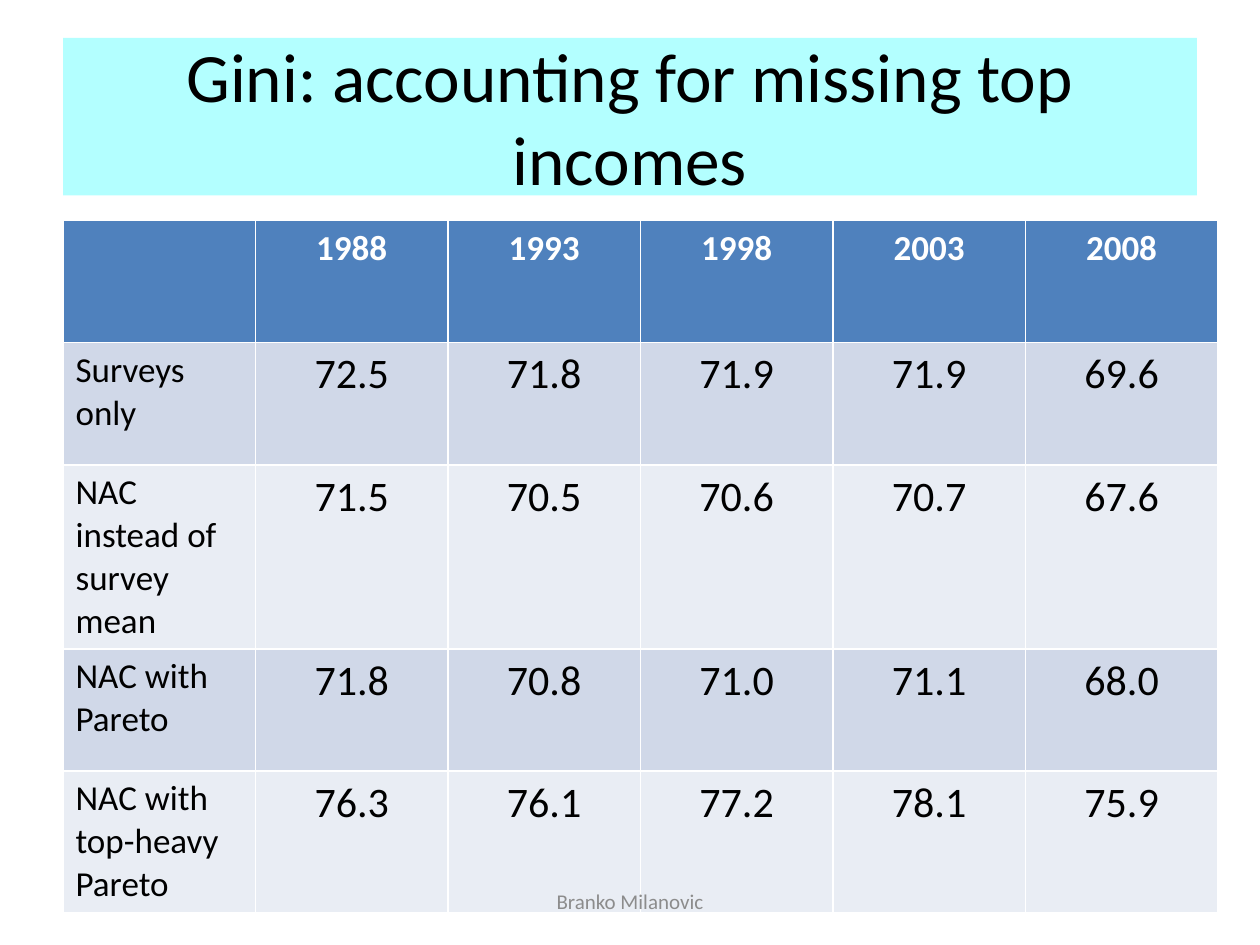
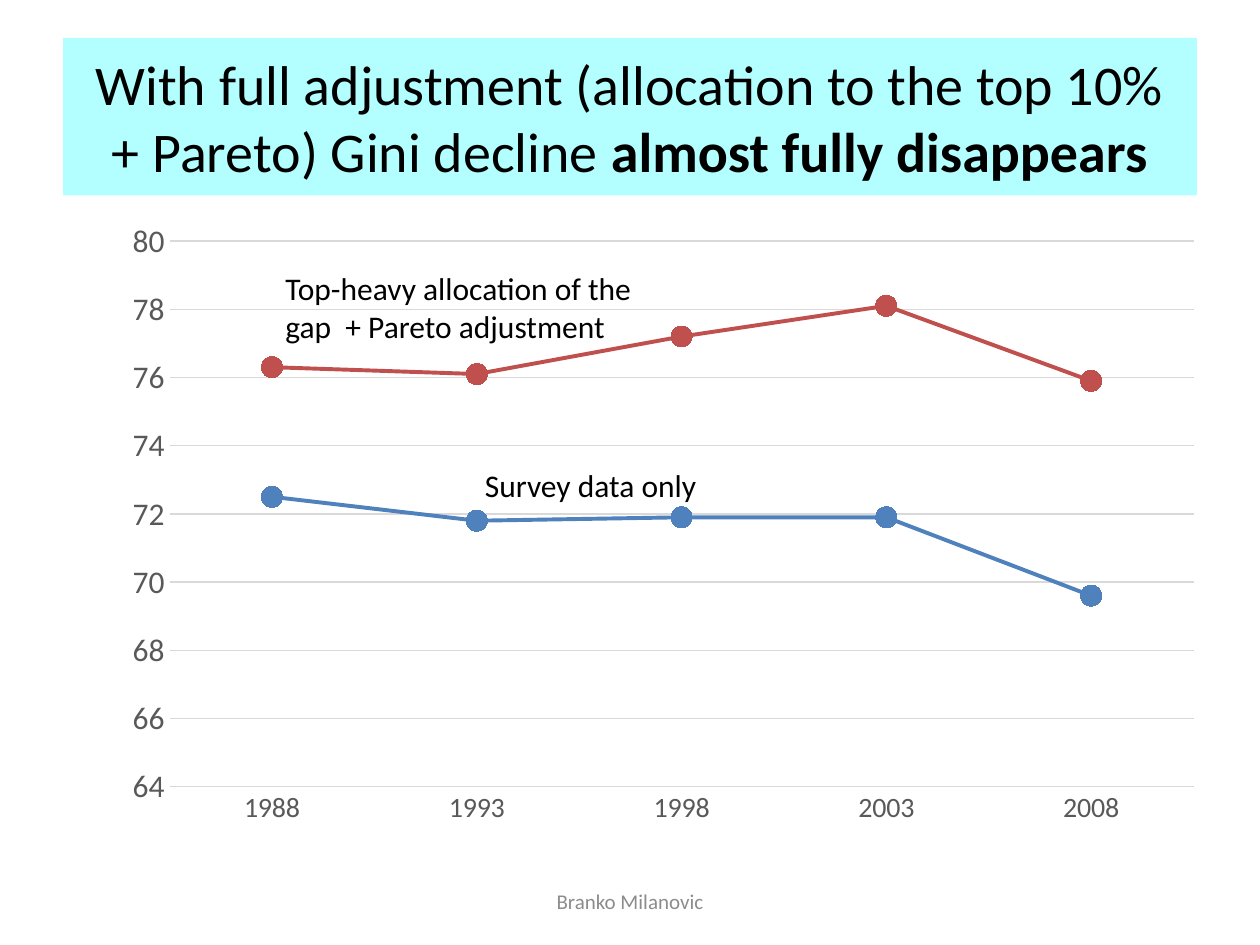
from dataclasses import dataclass

from lxml import etree
from pptx import Presentation
from pptx.chart.data import CategoryChartData
from pptx.dml.color import RGBColor
from pptx.enum.chart import XL_CHART_TYPE, XL_MARKER_STYLE, XL_TICK_MARK
from pptx.enum.text import MSO_ANCHOR, MSO_AUTO_SIZE, PP_ALIGN
from pptx.oxml.ns import qn
from pptx.util import Inches, Pt

LINE_MARKERS = XL_CHART_TYPE.LINE_MARKERS
CIRCLE = XL_MARKER_STYLE.CIRCLE
NO_TICK = XL_TICK_MARK.NONE
LEFT, CENTER = PP_ALIGN.LEFT, PP_ALIGN.CENTER
TOP, MIDDLE = MSO_ANCHOR.TOP, MSO_ANCHOR.MIDDLE
NO_AUTOFIT = MSO_AUTO_SIZE.NONE

SLIDE_WIDTH, SLIDE_HEIGHT = Inches(10), Inches(7.5)
GRID_COLUMNS, GRID_ROWS = 120, 90
TITLE_ONLY_LAYOUT = 5

YEARS = ["1988", "1993", "1998", "2003", "2008"]
GINI = {
    "Surveys only": [72.5, 71.8, 71.9, 71.9, 69.6],
    "NAC instead of survey mean": [71.5, 70.5, 70.6, 70.7, 67.6],
    "NAC with Pareto": [71.8, 70.8, 71.0, 71.1, 68.0],
    "NAC with top-heavy Pareto": [76.3, 76.1, 77.2, 78.1, 75.9],
}


@dataclass(frozen=True)
class Theme:
    font: str = "Calibri"
    text: str = "000000"
    white: str = "FFFFFF"
    band: str = "B3FFFF"
    blue: str = "4F81BD"
    red: str = "C0504D"
    stripes: tuple = ("D0D8E8", "E9EDF4")
    footer: str = "8C8C8C"
    axis_text: str = "595959"
    grid: str = "D9D9D9"
    title_size: float = 39.6
    long_title_size: float = 32
    value_size: float = 24
    label_size: float = 20
    note_size: float = 18
    category_size: float = 16
    footer_size: float = 12


THEME = Theme()


def color(value):
    return RGBColor.from_string(value)


def across(columns):
    return round(SLIDE_WIDTH * columns / GRID_COLUMNS)


def down(rows):
    return round(SLIDE_HEIGHT * rows / GRID_ROWS)


def place(left, top, width, height):
    return across(left), down(top), across(width), down(height)


def format_font(font, size, text_color=THEME.text, bold=False):
    font.name = THEME.font
    font.size = Pt(size)
    font.bold = bold
    font.color.rgb = color(text_color)


def write(frame, text, size, text_color=THEME.text, bold=False, align=LEFT, bold_ending=""):
    paragraph = frame.paragraphs[0]
    paragraph.alignment = align
    for part, is_bold in ((text, bold), (bold_ending, True)):
        if part:
            run = paragraph.add_run()
            run.text = part
            format_font(run.font, size, text_color, is_bold)


def add_text(slide, position, text, size, anchor=TOP, **text_format):
    frame = slide.shapes.add_textbox(*place(*position)).text_frame
    frame.word_wrap = True
    frame.vertical_anchor = anchor
    write(frame, text, size, **text_format)


def add_titled_slide(presentation, title_text, size, bold_ending=""):
    slide = presentation.slides.add_slide(presentation.slide_layouts[TITLE_ONLY_LAYOUT])
    title = slide.shapes.title
    title.left, title.top, title.width, title.height = place(6, 3.6, 108, 15)
    title.fill.solid()
    title.fill.fore_color.rgb = color(THEME.band)
    title.text_frame.auto_size = NO_AUTOFIT
    title.text_frame.vertical_anchor = MIDDLE
    write(title.text_frame, title_text, size, align=CENTER, bold_ending=bold_ending)
    return slide


def add_footer(slide):
    add_text(slide, (41, 83.4, 38, 4.8), "Branko Milanovic", THEME.footer_size,
             anchor=MIDDLE, text_color=THEME.footer, align=CENTER)


def fill_cell(cell, fill_color, text, size, **text_format):
    cell.fill.solid()
    cell.fill.fore_color.rgb = color(fill_color)
    write(cell.text_frame, text, size, **text_format)


def add_gini_table(slide):
    row_count, column_count = len(GINI) + 1, len(YEARS) + 1
    table = slide.shapes.add_table(
        row_count, column_count, *place(6, 21, 110, 11.64 * row_count)).table
    for column, heading in enumerate([""] + YEARS):
        fill_cell(table.cell(0, column), THEME.blue, heading, THEME.label_size,
                  text_color=THEME.white, bold=True, align=CENTER)
    for row, (label, values) in enumerate(GINI.items(), start=1):
        stripe = THEME.stripes[(row - 1) % 2]
        fill_cell(table.cell(row, 0), stripe, label, THEME.label_size)
        for column, value in enumerate(values, start=1):
            fill_cell(table.cell(row, column), stripe, f"{value:.1f}",
                      THEME.value_size, align=CENTER)


def set_line(line, line_color, width):
    line.color.rgb = color(line_color)
    line.width = Pt(width)


def set_plot_area(chart, **shares):
    plot_area = chart._chartSpace.chart.plotArea
    for old_layout in plot_area.findall(qn("c:layout")):
        plot_area.remove(old_layout)
    layout = etree.Element(qn("c:layout"))
    manual = etree.SubElement(layout, qn("c:manualLayout"))
    settings = {"layoutTarget": "inner", "xMode": "edge", "yMode": "edge", **shares}
    for name, value in settings.items():
        etree.SubElement(manual, qn(f"c:{name}")).set("val", str(value))
    plot_area.insert(0, layout)


def format_axis(axis, size):
    axis.major_tick_mark = NO_TICK
    axis.minor_tick_mark = NO_TICK
    format_font(axis.tick_labels.font, size, THEME.axis_text)


def format_series(series, series_color):
    series.smooth = False
    set_line(series.format.line, series_color, 2.25)
    series.marker.style = CIRCLE
    series.marker.size = 12
    series.marker.format.fill.solid()
    series.marker.format.fill.fore_color.rgb = color(series_color)
    set_line(series.marker.format.line, series_color, 0.75)


def add_gini_chart(slide, series_colors):
    data = CategoryChartData()
    data.categories = YEARS
    for name in series_colors:
        data.add_series(name, GINI[name])
    chart = slide.shapes.add_chart(LINE_MARKERS, *place(6, 21, 108, 59.4), data).chart
    chart.has_title = False
    chart.has_legend = False
    format_font(chart.font, 10)
    set_plot_area(chart, x=0.094, y=0.033, w=0.903, h=0.875)

    format_axis(chart.category_axis, THEME.category_size)
    set_line(chart.category_axis.format.line, THEME.grid, 0.75)
    value_axis = chart.value_axis
    format_axis(value_axis, THEME.note_size)
    value_axis.minimum_scale, value_axis.maximum_scale = 64, 80
    value_axis.major_unit = 2
    value_axis.tick_labels.number_format = "0"
    value_axis.tick_labels.number_format_is_linked = False
    value_axis.format.line.fill.background()
    set_line(value_axis.major_gridlines.format.line, THEME.grid, 0.75)

    chart.plots[0].vary_by_categories = False
    for series, series_color in zip(chart.plots[0].series, series_colors.values()):
        format_series(series, series_color)


def main():
    presentation = Presentation()
    presentation.slide_width, presentation.slide_height = SLIDE_WIDTH, SLIDE_HEIGHT

    table_slide = add_titled_slide(
        presentation, "Gini: accounting for missing top incomes", THEME.title_size)
    add_gini_table(table_slide)
    add_footer(table_slide)

    chart_slide = add_titled_slide(
        presentation,
        "With full adjustment (allocation to the top 10% + Pareto) Gini decline ",
        THEME.long_title_size, bold_ending="almost fully disappears")
    add_footer(chart_slide)
    add_text(chart_slide, (45, 43.8, 30, 4.8), "Survey data only", THEME.note_size)
    add_gini_chart(chart_slide, {
        "Surveys only": THEME.blue,
        "NAC with top-heavy Pareto": THEME.red,
    })
    add_text(chart_slide, (26, 25, 36, 8.5),
             "Top-heavy allocation of the gap  + Pareto adjustment", THEME.note_size)

    presentation.save("out.pptx")


if __name__ == "__main__":
    main()
